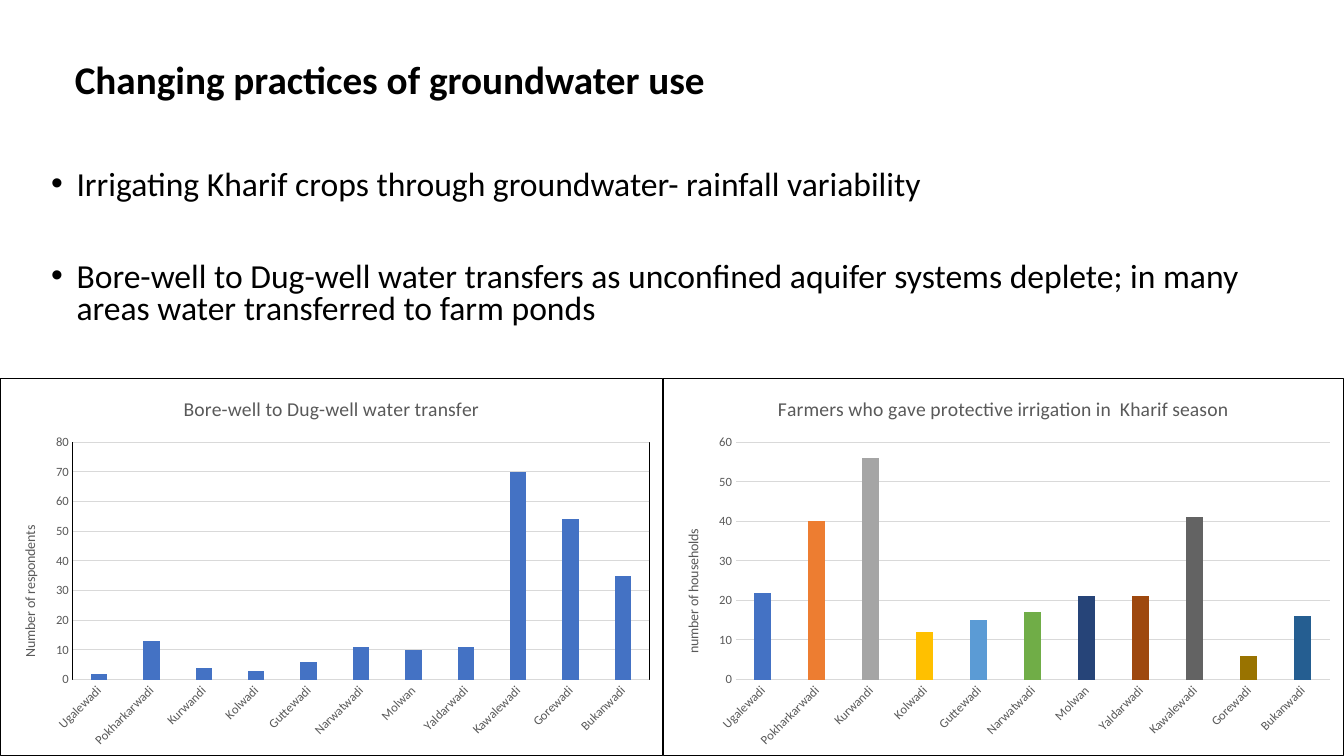
from dataclasses import dataclass

from lxml.etree import fromstring
from pptx import Presentation
from pptx.chart.data import CategoryChartData
from pptx.dml.color import RGBColor
from pptx.enum.chart import XL_CHART_TYPE, XL_TICK_MARK
from pptx.enum.text import MSO_ANCHOR, PP_ALIGN
from pptx.util import Cm, Pt


@dataclass(frozen=True)
class Theme:
    font: str = "Calibri"
    ink: str = "000000"
    muted: str = "595959"
    rule: str = "D9D9D9"
    accents: tuple = ("4472C4", "ED7D31", "A5A5A5", "FFC000", "5B9BD5", "70AD47",
                      "264478", "9E480E", "636363", "997300", "255E91")
    title_size: int = 28
    body_size: int = 24
    chart_title_size: int = 14
    axis_title_size: int = 10
    label_size: int = 9
    line_width: float = 0.75


THEME = Theme()
SLIDE_WIDTH, SLIDE_HEIGHT = 33.87, 19.05
CHART_TOP, CHART_SPLIT = 9.53, 16.71
CHART_HEIGHT = SLIDE_HEIGHT - CHART_TOP
NAMESPACES = ('xmlns:c="http://schemas.openxmlformats.org/drawingml/2006/chart" '
              'xmlns:a="http://schemas.openxmlformats.org/drawingml/2006/main"')

VILLAGES = ["Ugalewadi", "Pokharkarwadi", "Kurwandi", "Kolwadi", "Guttewadi", "Narwatwadi",
            "Molwan", "Yaldarwadi", "Kawalewadi", "Gorewadi", "Bukanwadi"]
TRANSFER_RESPONDENTS = [2, 13, 4, 3, 6, 11, 10, 11, 70, 54, 35]
IRRIGATING_HOUSEHOLDS = [22, 40, 56, 12, 15, 17, 21, 21, 41, 6, 16]
PRACTICES = [
    "Irrigating Kharif crops through groundwater- rainfall variability",
    "Bore-well to Dug-well water transfers as unconfined aquifer systems deplete; "
    "in many areas water transferred to farm ponds",
]


def style_font(font, size, color, bold=False):
    font.name = THEME.font
    font.size = Pt(size)
    font.bold = bold
    font.color.rgb = RGBColor.from_string(color)


def style_line(line, color):
    line.color.rgb = RGBColor.from_string(color)
    line.width = Pt(THEME.line_width)


def outline(color):
    """Return chart shape properties with no fill and a thin outline."""
    return fromstring(
        f'<c:spPr {NAMESPACES}><a:noFill/><a:ln w="{Pt(THEME.line_width)}">'
        f'<a:solidFill><a:srgbClr val="{color}"/></a:solidFill></a:ln></c:spPr>')


def place_title(slide, text, left, top, width, height):
    title = slide.shapes.title
    title.left, title.top, title.width, title.height = map(Cm, (left, top, width, height))
    frame = title.text_frame
    frame.text = text
    frame.vertical_anchor = MSO_ANCHOR.MIDDLE
    heading = frame.paragraphs[0]
    heading.alignment = PP_ALIGN.LEFT
    heading.line_spacing = 0.9
    style_font(heading.runs[0].font, THEME.title_size, THEME.ink, bold=True)


def add_bullets(slide, points, left, top, width, height):
    frame = slide.shapes.add_textbox(*map(Cm, (left, top, width, height))).text_frame
    frame.word_wrap = True
    frame.text = "\n".join(points)
    for index, point in enumerate(frame.paragraphs):
        point.line_spacing = 0.8
        point.space_before = Pt(43 if index else 10)
        style_font(point.runs[0].font, THEME.body_size, THEME.ink)
        properties = point._p.get_or_add_pPr()
        properties.set("marL", str(Cm(0.64)))
        properties.set("indent", str(-Cm(0.64)))
        properties.append(fromstring(f'<a:buFont {NAMESPACES} typeface="Arial"/>'))
        properties.append(fromstring(f'<a:buChar {NAMESPACES} char="•"/>'))


def write_chart_text(title, text, size):
    title.text_frame.text = text
    style_font(title.text_frame.paragraphs[0].runs[0].font, size, THEME.muted)


def style_axes(chart, value_title):
    villages, values = chart.category_axis, chart.value_axis
    for axis in (villages, values):
        axis.major_tick_mark = axis.minor_tick_mark = XL_TICK_MARK.NONE
        style_font(axis.tick_labels.font, THEME.label_size, THEME.muted)
    style_line(villages.format.line, THEME.rule)
    villages._element.txPr.bodyPr.set("rot", str(-45 * 60000))
    values.format.line.fill.background()
    values.has_major_gridlines = True
    style_line(values.major_gridlines.format.line, THEME.rule)
    write_chart_text(values.axis_title, value_title, THEME.axis_title_size)


def add_village_chart(slide, title, value_title, counts, left, top, width, height):
    data = CategoryChartData()
    data.categories = VILLAGES
    data.add_series("Series 1", counts)
    chart = slide.shapes.add_chart(XL_CHART_TYPE.COLUMN_CLUSTERED,
                                   *map(Cm, (left, top, width, height)), data).chart
    style_font(chart.font, THEME.axis_title_size, THEME.ink)
    chart._chartSpace.txPr.addprevious(outline(THEME.ink))
    chart.has_legend = False
    write_chart_text(chart.chart_title, title, THEME.chart_title_size)
    chart.chart_title.include_in_layout = False
    style_axes(chart, value_title)
    plot = chart.plots[0]
    plot.gap_width, plot.overlap = 219, -27
    plot.vary_by_categories = False
    columns = plot.series[0]
    columns.format.fill.solid()
    columns.format.fill.fore_color.rgb = RGBColor.from_string(THEME.accents[0])
    return chart


def color_by_village(chart):
    columns = chart.plots[0].series[0]
    for index, color in enumerate(THEME.accents):
        fill = columns.points[index].format.fill
        fill.solid()
        fill.fore_color.rgb = RGBColor.from_string(color)


def build_groundwater_slide(presentation):
    slide = presentation.slides.add_slide(presentation.slide_layouts[5])
    place_title(slide, "Changing practices of groundwater use", 1.63, 0.23, 29.21, 3.68)
    add_bullets(slide, PRACTICES, 1.04, 4.17, 31.88, 4.45)
    transfers = add_village_chart(
        slide, "Bore-well to Dug-well water transfer", "Number of respondents",
        TRANSFER_RESPONDENTS, 0, CHART_TOP, CHART_SPLIT, CHART_HEIGHT)
    transfers._chartSpace.chart.plotArea.append(outline(THEME.ink))
    irrigation = add_village_chart(
        slide, "Farmers who gave protective irrigation in  Kharif season",
        "number of households", IRRIGATING_HOUSEHOLDS,
        CHART_SPLIT, CHART_TOP, SLIDE_WIDTH - CHART_SPLIT, CHART_HEIGHT)
    color_by_village(irrigation)


def main():
    presentation = Presentation()
    presentation.slide_width = Cm(SLIDE_WIDTH)
    presentation.slide_height = Cm(SLIDE_HEIGHT)
    build_groundwater_slide(presentation)
    presentation.save("out.pptx")


if __name__ == "__main__":
    main()
